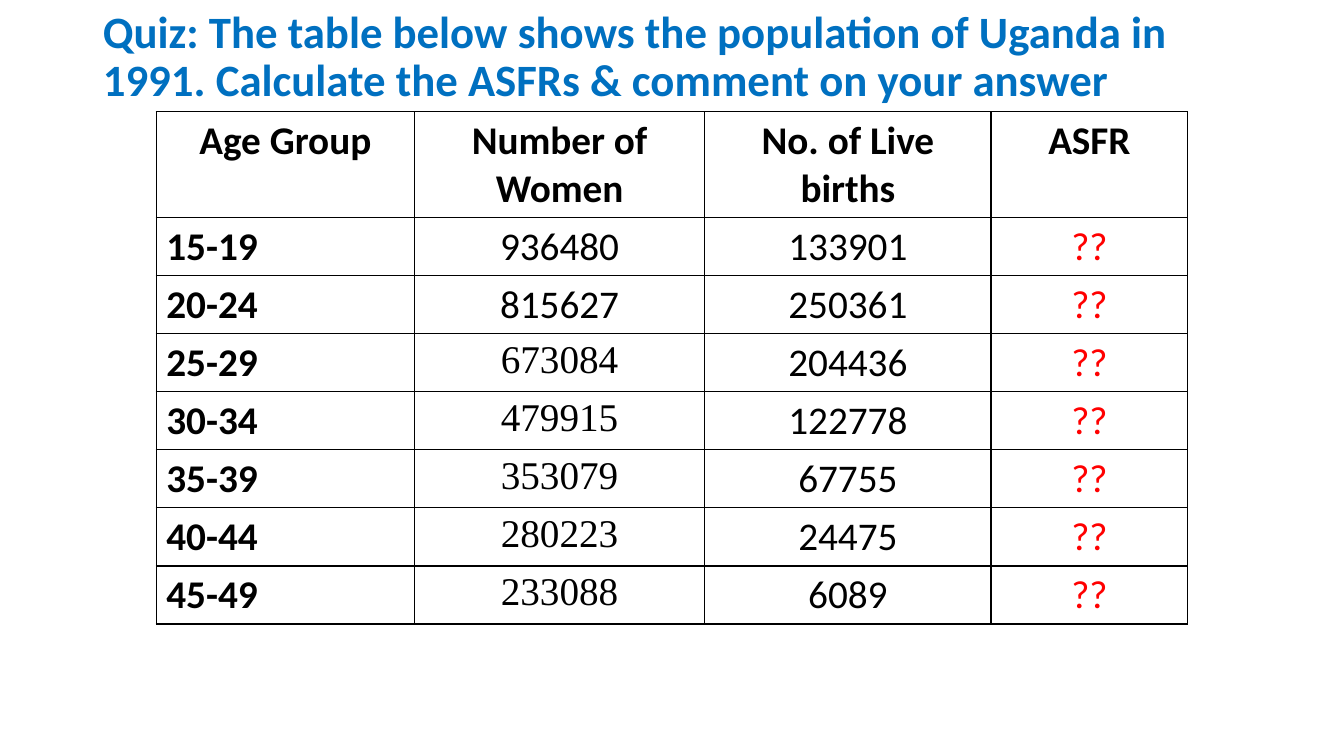
from lxml import etree
from pptx import Presentation
from pptx.dml.color import RGBColor
from pptx.enum import text as t
from pptx.oxml import ns
from pptx.util import Inches, Pt

HEADS = ["Age Group", "Number of Women", "No. of Live births", "ASFR"]
DATA = [
    ("15-19", "936480", "133901"),
    ("20-24", "815627", "250361"),
    ("25-29", "673084", "204436"),
    ("30-34", "479915", "122778"),
    ("35-39", "353079", "67755"),
    ("40-44", "280223", "24475"),
    ("45-49", "233088", "6089"),
]
WIDTHS = [2.56, 2.88, 2.84, 1.95]
HEAD_H, ROW_H = 0.98, 0.54
SERIF_FROM = 3  # first row whose number of women is set in Times


def rgb(code):
    return RGBColor.from_string(code)


def style(para, size, color, bold, face="Calibri"):
    font = para.font
    font.name, font.size, font.bold = face, Pt(size), bold
    font.color.rgb = rgb(color)


def border(cell, color="000000", width=1):
    """Draw all four edges; edges must precede the cell's fill."""
    props = cell._tc.get_or_add_tcPr()
    for i, side in enumerate(("lnL", "lnR", "lnT", "lnB")):
        line = etree.Element(ns.qn("a:" + side), w=str(Pt(width)))
        fill = etree.SubElement(line, ns.qn("a:solidFill"))
        etree.SubElement(fill, ns.qn("a:srgbClr"), val=color)
        props.insert(i, line)


def add_title(slide, left, top, width, height):
    title = slide.shapes.title
    title.left, title.top = Inches(left), Inches(top)
    title.width, title.height = Inches(width), Inches(height)
    frame = title.text_frame
    frame.text = ("Quiz: The table below shows the population of Uganda in 1991. "
                  "Calculate the ASFRs & comment on your answer")
    frame.word_wrap = True
    frame.auto_size = t.MSO_AUTO_SIZE.NONE
    frame.vertical_anchor = t.MSO_ANCHOR.MIDDLE
    para = frame.paragraphs[0]
    para.alignment = t.PP_ALIGN.LEFT
    para.line_spacing = 0.9
    style(para, 32, "0070C0", True)


def add_births(slide, left, top):
    rows = [HEADS] + [(*row, "??") for row in DATA]
    height = HEAD_H + ROW_H * len(DATA)
    table = slide.shapes.add_table(
        len(rows), len(HEADS), Inches(left), Inches(top),
        Inches(sum(WIDTHS)), Inches(height)).table
    table.horz_banding = False
    for col, width in zip(table.columns, WIDTHS):
        col.width = Inches(width)
    for r, row in enumerate(rows):
        table.rows[r].height = Inches(ROW_H if r else HEAD_H)
        for c, value in enumerate(row):
            cell = table.cell(r, c)
            cell.text = value
            cell.fill.background()
            border(cell)
            para = cell.text_frame.paragraphs[0]
            label = r > 0 and c == 0
            para.alignment = t.PP_ALIGN.LEFT if label else t.PP_ALIGN.CENTER
            serif = c == 1 and r >= SERIF_FROM
            style(para, 28, "FF0000" if value == "??" else "000000",
                  r == 0 or label, "Times New Roman" if serif else "Calibri")


def main():
    deck = Presentation()
    deck.slide_width, deck.slide_height = Inches(13.33), Inches(7.5)
    slide = deck.slides.add_slide(deck.slide_layouts.get_by_name("Title Only"))
    add_title(slide, 0.92, 0.15, 11.5, 0.85)
    add_births(slide, 1.55, 1.11)
    deck.save("out.pptx")


if __name__ == "__main__":
    main()
